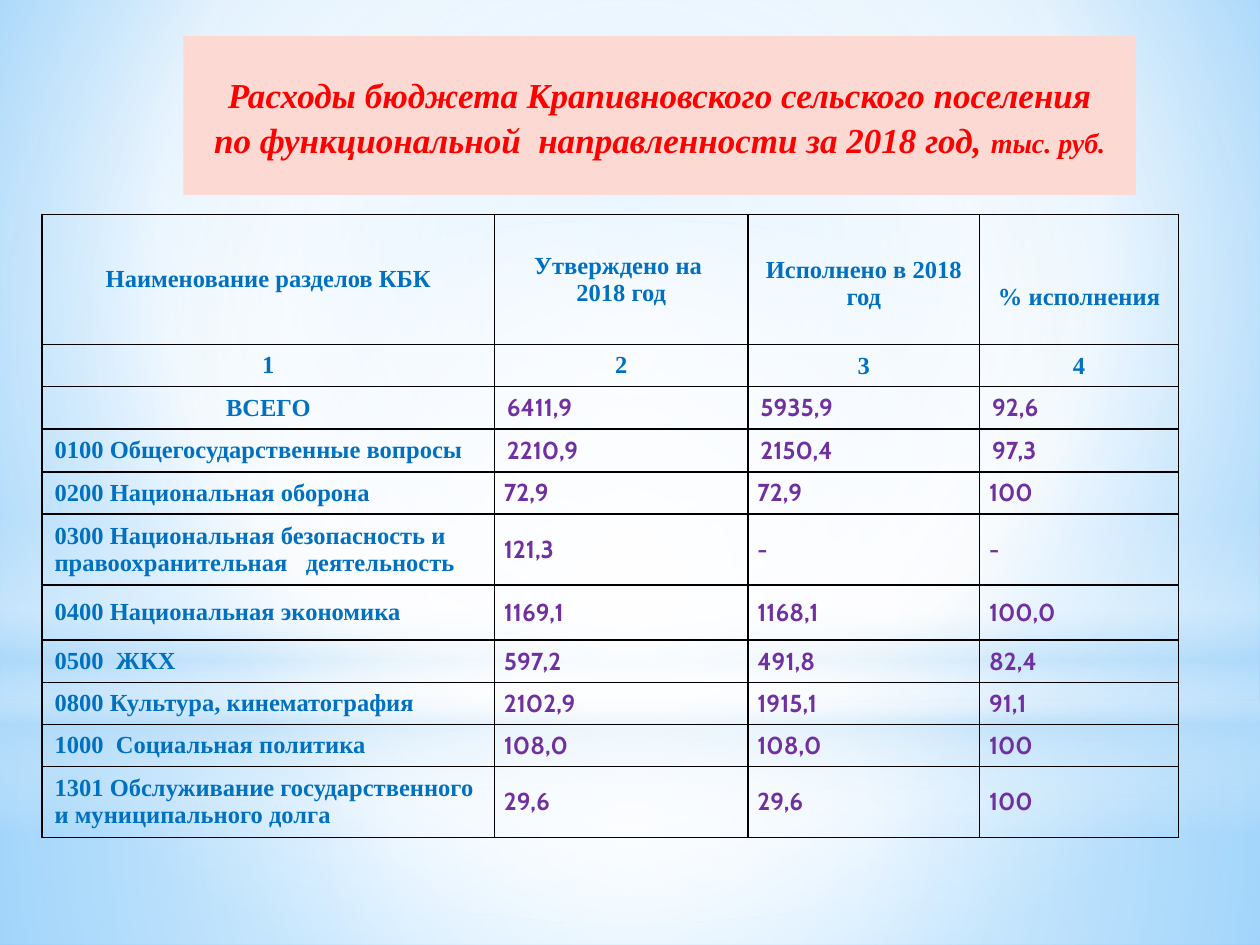
from lxml import etree
from pptx import Presentation
from pptx.dml.color import RGBColor
from pptx.enum.shapes import MSO_SHAPE
from pptx.enum.text import MSO_ANCHOR, PP_ALIGN
from pptx.oxml.ns import qn
from pptx.util import Cm, Pt

RECTANGLE, OVAL = MSO_SHAPE.RECTANGLE, MSO_SHAPE.OVAL
MIDDLE, BOTTOM = MSO_ANCHOR.MIDDLE, MSO_ANCHOR.BOTTOM
LEFT, CENTER = PP_ALIGN.LEFT, PP_ALIGN.CENTER

COLORS = {
    "title": "FF0000", "title_fill": "FCD9D3", "label": "0070C0",
    "value": "7030A0", "border": "000000", "white": "FFFFFF",
    "haze": "B4DCFA", "sky": "9ED5FF", "deep_sky": "5BB9FF",
}
SERIF, SANS = "Times New Roman", "Cabin"
CENTRE = (50, 50, 50, 50)

TITLE = [
    [("Расходы бюджета Крапивновского сельского поселения", 20)],
    [("по функциональной  направленности за 2018 год, ", 20), ("тыс. руб.", 16)],
]
COLUMN_WIDTHS = [9.12, 5.11, 4.67, 4.01]
HEADER_ROWS = 2
# Row height, then the four cells
ROWS = [
    (2.62, "Наименование разделов КБК", "Утверждено на \n2018 год",
     "Исполнено в 2018 год", "% исполнения"),
    (0.85, "1", "2", "3", "4"),
    (0.85, "ВСЕГО", "6411,9", "5935,9", "92,6"),
    (0.85, "0100 Общегосударственные вопросы", "2210,9", "2150,4", "97,3"),
    (0.85, "0200 Национальная оборона", "72,9", "72,9", "100"),
    (1.43, "0300 Национальная безопасность и правоохранительная   деятельность",
     "121,3", "-", "-"),
    (1.11, "0400 Национальная экономика", "1169,1", "1168,1", "100,0"),
    (0.85, "0500  ЖКХ", "597,2", "491,8", "82,4"),
    (0.85, "0800 Культура, кинематография", "2102,9", "1915,1", "91,1"),
    (0.85, "1000  Социальная политика", "108,0", "108,0", "100"),
    (1.43, "1301 Обслуживание государственного и муниципального долга",
     "29,6", "29,6", "100"),
]


def rgb(name):
    return RGBColor.from_string(COLORS[name])


def add_color(parent, name, opacity=100):
    color = etree.SubElement(parent, qn("a:srgbClr"), val=COLORS[name])
    if opacity < 100:
        etree.SubElement(color, qn("a:alpha"), val=str(opacity * 1000))


def set_gradient(fill, holder, stops, focus=None):
    """Fill with (position, color, opacity) stops: circular around focus, else downwards."""
    fill.background()
    gradient = etree.Element(qn("a:gradFill"), rotWithShape="1")
    stop_list = etree.SubElement(gradient, qn("a:gsLst"))
    for position, name, opacity in stops:
        stop = etree.SubElement(stop_list, qn("a:gs"), pos=str(position * 1000))
        add_color(stop, name, opacity)
    if focus:
        circle = etree.SubElement(gradient, qn("a:path"), path="circle")
        sides = {side: str(share * 1000) for side, share in zip("ltrb", focus)}
        etree.SubElement(circle, qn("a:fillToRect"), **sides)
    else:
        etree.SubElement(gradient, qn("a:lin"), ang="5400000", scaled="0")
    holder.replace(holder.find(qn("a:noFill")), gradient)


def add_plain_shape(page, kind, box):
    shape = page.shapes.add_shape(kind, *(Cm(length) for length in box))
    shape.shadow.inherit = False
    shape.line.fill.background()
    return shape


def add_glow(page, kind, box, stops, focus=None):
    shape = add_plain_shape(page, kind, box)
    set_gradient(shape.fill, shape.element.spPr, stops, focus)


def add_backdrop(page, box):
    left, top, width, height = box
    horizon = top + 14.17
    set_gradient(page.background.fill, page.element.find(".//" + qn("p:bgPr")),
                 [(0, "sky", 100), (60, "white", 100), (100, "deep_sky", 100)],
                 (20, 10, 20, 60))
    add_glow(page, RECTANGLE, (left, horizon, width, top + height - horizon),
             [(0, "white", 91), (37, "white", 76), (100, "haze", 79)], CENTRE)
    add_glow(page, RECTANGLE, (left, top, width, horizon - top),
             [(0, "white", 89), (48, "white", 62), (100, "haze", 79)], CENTRE)
    add_glow(page, RECTANGLE, (left, top + 10.46, width, 6.35),
             [(0, "white", 0), (29, "white", 30), (45, "haze", 40),
              (55, "white", 26), (65, "haze", 60), (100, "white", 0)])
    add_glow(page, OVAL, (left, top + 4.45, width, 14.17),
             [(0, "white", 100), (56, "white", 0)], CENTRE)


def format_font(font, face, size, color):
    font.name, font.size, font.bold = face, Pt(size), True
    font.color.rgb = rgb(color)


def add_title(page, box):
    shape = add_plain_shape(page, RECTANGLE, box)
    shape.fill.solid()
    shape.fill.fore_color.rgb = rgb("title_fill")
    frame = shape.text_frame
    frame.word_wrap = True
    frame.vertical_anchor = MIDDLE
    for index, line in enumerate(TITLE):
        para = frame.add_paragraph() if index else frame.paragraphs[0]
        para.alignment = CENTER
        para.line_spacing = 1.08
        for text, size in line:
            span = para.add_run()
            span.text = text
            format_font(span.font, SERIF, size, "title")
            span.font.italic = True


def add_borders(cell):
    properties = cell._tc.get_or_add_tcPr()
    for side in ("lnL", "lnR", "lnT", "lnB"):
        line = etree.SubElement(properties, qn("a:" + side), w=str(Pt(1)))
        add_color(etree.SubElement(line, qn("a:solidFill")), "border")


def fill_cell(cell, text, row, column):
    is_value = row >= HEADER_ROWS and column > 0
    is_compact = is_value and row > 3
    add_borders(cell)
    cell.fill.background()
    cell.vertical_anchor = BOTTOM if column > 1 and row <= 3 else MIDDLE
    cell.margin_left = cell.margin_right = Cm(0.19 if is_compact else 0.25)
    cell.margin_top = cell.margin_bottom = Cm(0 if is_compact else 0.13)
    if row == 0 and column > 1:
        cell.margin_bottom = Cm(0.67)
    cell.text_frame.text = text
    is_centered = row < HEADER_ROWS or (row == HEADER_ROWS and column == 0)
    for para in cell.text_frame.paragraphs:
        para.alignment = CENTER if is_centered else LEFT
        for span in para.runs:
            format_font(span.font, SANS if is_value else SERIF, 14,
                        "value" if is_value else "label")


def add_budget_table(page, left, top):
    heights = [row[0] for row in ROWS]
    table = page.shapes.add_table(
        len(ROWS), len(COLUMN_WIDTHS), Cm(left), Cm(top),
        Cm(sum(COLUMN_WIDTHS)), Cm(sum(heights))).table
    table.first_row = table.horz_banding = False
    for column, width in zip(table.columns, COLUMN_WIDTHS):
        column.width = Cm(width)
    for row, (height, *texts) in enumerate(ROWS):
        table.rows[row].height = Cm(height)
        for column, text in enumerate(texts):
            fill_cell(table.cell(row, column), text, row, column)


def main():
    deck = Presentation()
    deck.slide_width, deck.slide_height = Cm(25.4), Cm(19.05)
    page = deck.slides.add_slide(deck.slide_layouts[6])
    add_backdrop(page, (0, 0, 25.4, 19.05))
    add_title(page, (3.7, 0.73, 19.2, 3.2))
    add_budget_table(page, 0.85, 4.32)
    deck.save("out.pptx")


if __name__ == "__main__":
    main()
